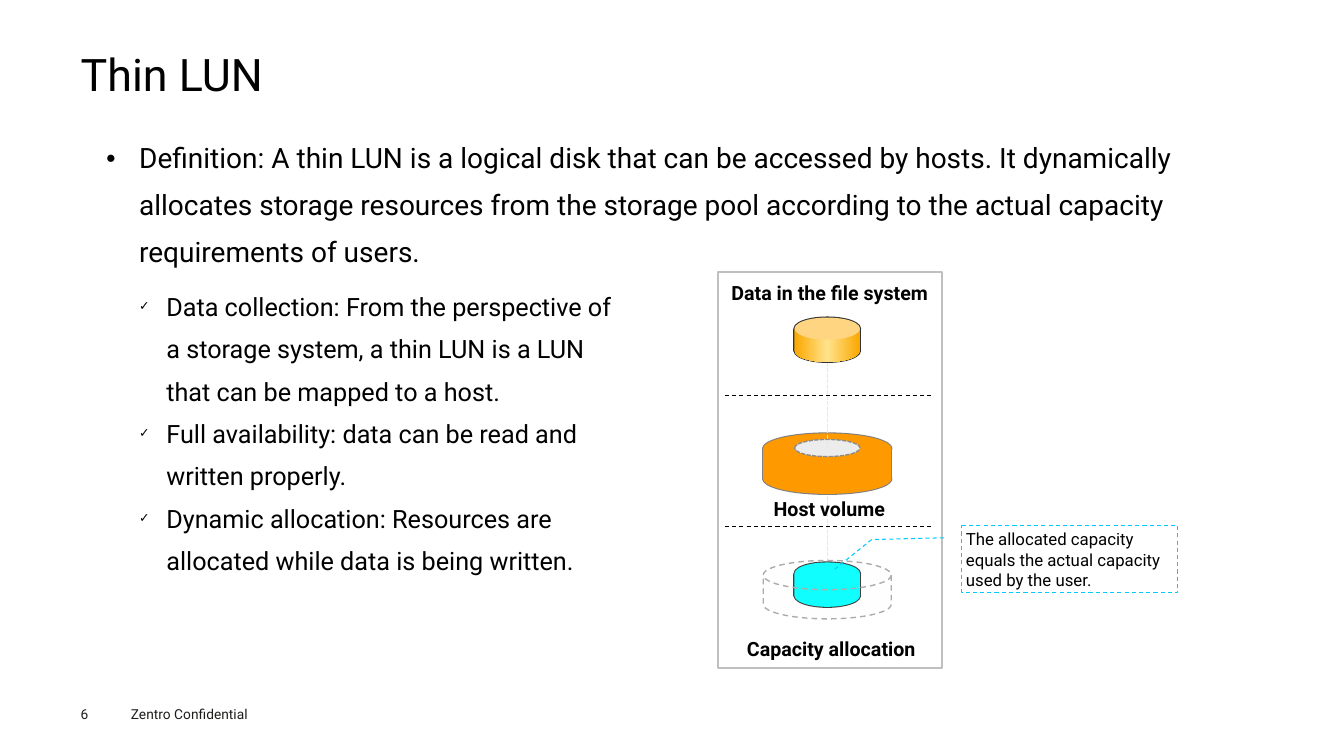
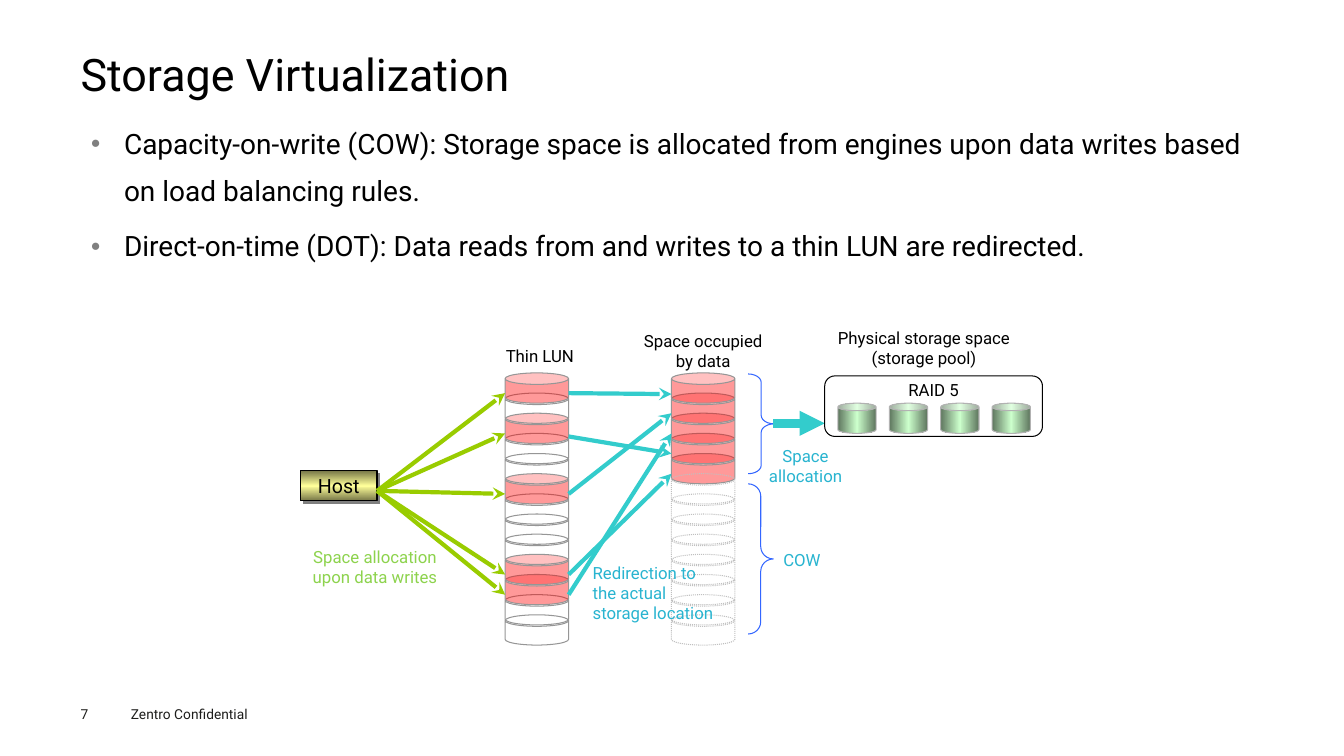
from lxml import etree
from pptx import Presentation
from pptx.dml.color import RGBColor
from pptx.enum.dml import MSO_LINE
from pptx.enum.shapes import MSO_CONNECTOR, MSO_SHAPE
from pptx.enum.text import MSO_ANCHOR, MSO_AUTO_SIZE, PP_ALIGN
from pptx.oxml.ns import qn
from pptx.util import Inches, Pt

LEFT, CENTER = PP_ALIGN.LEFT, PP_ALIGN.CENTER
TOP, MIDDLE = MSO_ANCHOR.TOP, MSO_ANCHOR.MIDDLE
DASH, SYS_DASH, DOT = MSO_LINE.DASH, MSO_LINE.SQUARE_DOT, MSO_LINE.ROUND_DOT
CAN, OVAL, RECTANGLE = MSO_SHAPE.CAN, MSO_SHAPE.OVAL, MSO_SHAPE.RECTANGLE
ROUNDED, BRACE = MSO_SHAPE.ROUNDED_RECTANGLE, MSO_SHAPE.RIGHT_BRACE
CALLOUT = MSO_SHAPE.LINE_CALLOUT_2

# Shared colours and text
FONT = "Roboto"
BLACK = RGBColor(0x00, 0x00, 0x00)
WHITE = RGBColor(0xFF, 0xFF, 0xFF)
FOOTER_INK = RGBColor(0x1D, 0x1D, 0x1B)
BULLET_GRAY = RGBColor(0x80, 0x80, 0x80)
FRAME_GRAY = RGBColor(0xBF, 0xBF, 0xBF)
AXIS_GRAY = RGBColor(0xE7, 0xE6, 0xE6)
HOLE_FILL = RGBColor(0xEC, 0xEC, 0xEC)
HOLE_LINE = RGBColor(0x8C, 0x8C, 0x8C)
DARK_LINE = RGBColor(0x33, 0x33, 0x33)
RING_LINE = RGBColor(0x7F, 0x7F, 0x7F)
GHOST_FILL = RGBColor(0xF2, 0xF2, 0xF2)
GHOST_LINE = RGBColor(0xAF, 0xAB, 0xAB)
CYAN = RGBColor(0x00, 0xFF, 0xFF)
CALLOUT_BLUE = RGBColor(0x00, 0xCC, 0xFF)
ORANGE = RGBColor(0xFF, 0x99, 0x00)
GOLD_TOP = RGBColor(0xFF, 0xD5, 0x81)
GOLD = (RGBColor(0xFA, 0xA7, 0x00), RGBColor(0xFF, 0xE3, 0x8B))
OLIVE = (RGBColor(0x76, 0x76, 0x47), RGBColor(0xFF, 0xFF, 0x99))
GREEN = (RGBColor(0x5E, 0x76, 0x5E), RGBColor(0xCC, 0xFF, 0xCC))
DISK_LINE = RGBColor(0xB2, 0xB2, 0xB2)
RED = RGBColor(0xFF, 0x00, 0x00)
BLOCK_LINE = RGBColor(0x96, 0x96, 0x96)
FREE_LINE = RGBColor(0xC0, 0xC0, 0xC0)
BRACE_BLUE = RGBColor(0x33, 0x66, 0xFF)
WRITE_GREEN = RGBColor(0x99, 0xCC, 0x00)
REDIRECT_TEAL = RGBColor(0x33, 0xCC, 0xCC)
LABEL_BLUE = RGBColor(0x28, 0xB4, 0xD0)
LABEL_GREEN = RGBColor(0x8D, 0xD3, 0x4D)

FOOTER = "Zentro Confidential"
FIRST_PAGE = 6
DEFAULT_INSETS = (0.1, 0.05, 0.1, 0.05)
LIST_INSETS = (0.09, 0.04, 0.09, 0.04)

# Thin LUN content
DEFINITION = [
    "Definition: A thin LUN is a logical disk that can be accessed by hosts. It dynamically allocates "
    "storage resources from the storage pool according to the actual capacity requirements of users."]
FEATURES = [
    "Data collection: From the perspective of a storage system, a thin LUN is a LUN that can be "
    "mapped to a host.",
    "Full availability: data can be read and written properly.",
    "Dynamic allocation: Resources are allocated while data is being written."]
LAYER_LABELS = [
    ("Data in the file system", (6.99, 2.74, 2.48, 0.34)),
    ("Host volume", (7.08, 4.88, 2.29, 0.34)),
    ("Capacity allocation", (7.1, 6.27, 2.29, 0.34))]
CALLOUT_TEXT = "The allocated capacity equals the actual capacity used by the user."
CALLOUT_POINTS = (0.188, -0.083, 0.214, -0.418, 0.665, -0.594)

# Storage virtualization content
METHODS = [
    "Capacity-on-write (COW): Storage space is allocated from engines upon data writes based on "
    "load balancing rules.",
    "Direct-on-time (DOT): Data reads from and writes to a thin LUN are redirected."]
LUN_LEFT, OCCUPIED_LEFT, BLOCK_WIDTH = 5.01, 6.66, 0.63
STACK_TOP, BLOCK_STEP, BLOCK_HEIGHT = 3.7, 0.2, 0.3
STACKS = [  # left, rows from the bottom up, rows holding data, line, dash
    (LUN_LEFT, range(12, -1, -1), {0, 2, 5, 9, 10}, BLOCK_LINE, None),
    (OCCUPIED_LEFT, range(4, -1, -1), set(range(5)), BLOCK_LINE, None),
    (OCCUPIED_LEFT, range(12, 4, -1), set(), FREE_LINE, DOT)]
WRITE_TARGETS = (4.3, 4.9, 5.7, 5.9, 3.9)
REDIRECTS = [(3.9, 3.91), (4.33, 4.5), (4.9, 4.1), (5.7, 4.7), (5.9, 4.3)]
BRACES = [((7.42, 4.8, 0.25, 1.49), 0.49), ((7.42, 3.71, 0.26, 0.99), 0.323)]
DIAGRAM_LABELS = [
    ("Thin LUN", (4.43, 3.38, 1.85, 0.3), BLACK, CENTER),
    ("Redirection to the actual storage location", (5.78, 5.53, 1.47, 0.71), LABEL_BLUE, LEFT),
    ("COW", (7.67, 5.4, 1.65, 0.4), LABEL_BLUE, LEFT),
    ("Space allocation", (7.45, 4.37, 1.08, 0.5), LABEL_BLUE, CENTER),
    ("Space occupied by data", (6.22, 3.23, 1.51, 0.41), BLACK, CENTER),
    ("Physical storage space (storage pool)", (8.2, 3.2, 1.93, 0.38), BLACK, CENTER),
    ("Space allocation upon data writes", (2.97, 5.37, 1.5, 0.66), LABEL_GREEN, CENTER)]


def add_xml(parent, tag, **attributes):
    return etree.SubElement(parent, qn(tag), attributes)


def place(shape, box):
    for name, value in zip(("left", "top", "width", "height"), box):
        setattr(shape, name, Inches(value))


def write(shape, texts, size, color=BLACK, align=LEFT, bold=False, anchor=TOP,
          insets=DEFAULT_INSETS, bullet=None, **spacing):
    """Fill a shape with paragraphs; bullet is (character, colour, percent, text indent, hang)."""
    frame = shape.text_frame
    frame_format = {"word_wrap": True, "auto_size": MSO_AUTO_SIZE.NONE, "vertical_anchor": anchor}
    for side, inset in zip(("left", "top", "right", "bottom"), insets):
        frame_format["margin_" + side] = Inches(inset)
    for name, value in frame_format.items():
        setattr(frame, name, value)
    for index, text in enumerate(texts):
        paragraph = frame.paragraphs[0] if index == 0 else frame.add_paragraph()
        if bullet:
            character, bullet_color, percent, indent, hang = bullet
            properties = paragraph._p.get_or_add_pPr()
            properties.set("marL", str(Inches(indent)))
            properties.set("indent", str(-Inches(hang)))
            add_xml(add_xml(properties, "a:buClr"), "a:srgbClr", val=str(bullet_color))
            add_xml(properties, "a:buSzPct", val=str(percent * 1000))
            add_xml(properties, "a:buChar", char=character)
        paragraph_format = {"alignment": align, "space_before": Pt(0), **spacing}
        if index == 0:
            paragraph_format["space_before"] = Pt(0)
        for name, value in paragraph_format.items():
            setattr(paragraph, name, value)
        run = paragraph.add_run()
        run.text = text
        for name, value in {"name": FONT, "size": Pt(size), "bold": bold}.items():
            setattr(run.font, name, value)
        run.font.color.rgb = color


def add_label(slide, text, box, size, **text_format):
    label = slide.shapes.add_textbox(*map(Inches, box))
    write(label, [text], size, **text_format)


def set_line(line, color, width, dash=None):
    line.color.rgb = color
    line.width = Pt(width)
    if dash:
        line.dash_style = dash


def add_figure(slide, kind, box, fill=None, line=None, adjust=(), opacity=None, angle=0):
    """fill is None, a colour, or an (edge, middle) pair; line is (colour, width, dash)."""
    shape = slide.shapes.add_shape(kind, *map(Inches, box))
    shape.shadow.inherit = False
    for index, value in enumerate(adjust):
        shape.adjustments[index] = value
    if fill is None:
        shape.fill.background()
    elif isinstance(fill, RGBColor):
        shape.fill.solid()
        shape.fill.fore_color.rgb = fill
        if opacity:
            color = shape.element.spPr.find(qn("a:solidFill"))[0]
            add_xml(color, "a:alpha", val=str(opacity * 1000))
    else:
        edge, middle = fill
        shape.fill.gradient()
        shape.fill.gradient_angle = angle
        stops = shape.element.spPr.find(qn("a:gradFill")).find(qn("a:gsLst"))
        for stop in list(stops):
            stops.remove(stop)
        for position, color in ((0, edge), (50000, middle), (100000, edge)):
            stop = add_xml(stops, "a:gs", pos=str(position))
            add_xml(stop, "a:srgbClr", val=str(color))
    if line:
        set_line(shape.line, *line)
    else:
        shape.line.fill.background()
    return shape


def add_line(slide, start, end, color, width, dash=None, head=None):
    connector = slide.shapes.add_connector(MSO_CONNECTOR.STRAIGHT, *map(Inches, start + end))
    set_line(connector.line, color, width, dash)
    properties = connector.element.spPr
    if head:
        add_xml(properties.find(qn("a:ln")), "a:tailEnd", type=head)
    add_xml(properties, "a:effectLst")


def add_cylinder(slide, left, top, width, cap, fill, outline, top_fill):
    """Outlined pieces first, then the same pieces without lines, so only the silhouette shows."""
    for line in ((outline, 1.5), None):
        for half_caps, kind in ((2, OVAL), (1, RECTANGLE), (0, OVAL)):
            box = (left, top + half_caps * cap / 2, width, cap)
            add_figure(slide, kind, box, fill if half_caps else top_fill, line)


def add_slide(presentation, layout_index, title, page):
    slide = presentation.slides.add_slide(presentation.slide_layouts[layout_index])
    place(slide.shapes.title, (0.8, 0.49, 11.73, 0.54))
    write(slide.shapes.title, [title], 32, anchor=MIDDLE, insets=(0, 0, 0, 0), line_spacing=0.9)
    add_label(slide, FOOTER, (1.2, 6.95, 1.6, 0.27), 9.8, color=FOOTER_INK)
    add_label(slide, str(page), (0.8, 7, 0.55, 0.16), 9.8, color=FOOTER_INK, insets=(0, 0, 0, 0))
    return slide


def fill_list(slide, index, box, texts, size, bullet, insets, gap=0):
    body = slide.placeholders[index]
    place(body, box)
    write(body, texts, size, bullet=bullet, insets=insets, line_spacing=1.4, space_before=Pt(gap))


def build_thin_lun(presentation, page):
    slide = add_slide(presentation, 3, "Thin LUN", page)
    fill_list(slide, 1, (0.96, 1.22, 11.57, 1.02), DEFINITION, 20,
              ("●", BLACK, 60, 0.33, 0.33), LIST_INSETS)
    fill_list(slide, 2, (0.85, 2.73, 5.5, 3.41), FEATURES, 18,
              ("✓", BLACK, 50, 0.71, 0.27), LIST_INSETS)

    # Layers, with the axis passing behind or in front of them
    axis, core_left, core_width, ring_left, ring_width = 8.21, 7.88, 0.65, 7.57, 1.27
    add_figure(slide, RECTANGLE, (7.12, 2.7, 2.22, 3.93), WHITE, (FRAME_GRAY, 1.5))
    add_line(slide, (axis, 4.76), (axis, 5.77), AXIS_GRAY, 1, SYS_DASH)
    add_cylinder(slide, core_left, 5.58, core_width, 0.22, CYAN, DARK_LINE, CYAN)
    add_cylinder(slide, ring_left, 4.3, ring_width, 0.3, ORANGE, RING_LINE, ORANGE)
    add_figure(slide, OVAL, (core_left, 4.36, core_width, 0.17), HOLE_FILL, (HOLE_LINE, 1, SYS_DASH))
    add_line(slide, (axis, 3.43), (axis, 4.44), AXIS_GRAY, 1, SYS_DASH)
    add_cylinder(slide, core_left, 3.15, core_width, 0.22, GOLD, DARK_LINE, GOLD_TOP)
    for divider in (3.92, 5.22):
        add_line(slide, (7.19, divider), (9.23, divider), BLACK, 0.75, DASH)
    for text, box in LAYER_LABELS:
        add_label(slide, text, box, 14, align=CENTER, bold=True)
    add_figure(slide, CAN, (ring_left, 5.56, ring_width, 0.58), GHOST_FILL,
               (GHOST_LINE, 1, DASH), (0.5,), opacity=7)

    # Callout
    callout = add_figure(slide, CALLOUT, (9.54, 5.21, 2.14, 0.67), None,
                         (CALLOUT_BLUE, 0.75, DASH), CALLOUT_POINTS)
    write(callout, [CALLOUT_TEXT], 12, insets=(0.04,) * 4)


def build_virtualization(presentation, page):
    slide = add_slide(presentation, 1, "Storage Virtualization", page)
    fill_list(slide, 1, (0.8, 1.07, 11.73, 1.22), METHODS, 20,
              ("●", BULLET_GRAY, 60, 0.33, 0.33), DEFAULT_INSETS, gap=6)

    # Stacks of storage blocks
    for left, rows, used_rows, color, dash in STACKS:
        for row in rows:
            box = (left, STACK_TOP + row * BLOCK_STEP, BLOCK_WIDTH, BLOCK_HEIGHT)
            add_figure(slide, CAN, box, RED if row in used_rows else None,
                       (color, 0.75, dash), (0.38,), opacity=40)
    for box, curve in BRACES:
        add_figure(slide, BRACE, box, None, (BRACE_BLUE, 0.75), (curve, 0.5))

    # Host
    host = add_figure(slide, RECTANGLE, (2.98, 4.67, 0.76, 0.3), OLIVE, (BLACK, 0.75), angle=90)
    shadow = add_xml(host.element.spPr.find(qn("a:effectLst")), "a:outerShdw",
                     blurRad="0", dist=str(Pt(2.8)), dir="2700000", algn="ctr", rotWithShape="0")
    add_xml(shadow, "a:srgbClr", val=str(BULLET_GRAY))
    write(host, ["Host"], 14, align=CENTER, anchor=MIDDLE)

    # Arrows
    for target in WRITE_TARGETS:
        add_line(slide, (3.74, 4.87), (LUN_LEFT, target), WRITE_GREEN, 3, head="stealth")
    for source, target in REDIRECTS:
        add_line(slide, (LUN_LEFT + BLOCK_WIDTH, source), (OCCUPIED_LEFT, target),
                 REDIRECT_TEAL, 3, head="stealth")
    add_line(slide, (7.67, 4.2), (8.18, 4.2), REDIRECT_TEAL, 6, head="triangle")

    # Storage pool
    pool = add_figure(slide, ROUNDED, (8.18, 3.73, 2.16, 0.6), None, (BLACK, 0.75), (0.167,))
    write(pool, ["RAID 5"], 12, align=CENTER, insets=(0.02, 0.01, 0.02, 0.01))
    for disk in range(4):
        add_figure(slide, CAN, (8.31 + disk * 0.51, 4, 0.38, 0.3), GREEN, (DISK_LINE, 0.75), (0.25,))
    for text, box, color, align in DIAGRAM_LABELS:
        add_label(slide, text, box, 12, color=color, align=align)


def main():
    presentation = Presentation()
    presentation.slide_width, presentation.slide_height = Inches(13.33), Inches(7.5)
    for page, build in enumerate((build_thin_lun, build_virtualization), FIRST_PAGE):
        build(presentation, page)
    presentation.save("out.pptx")


if __name__ == "__main__":
    main()
